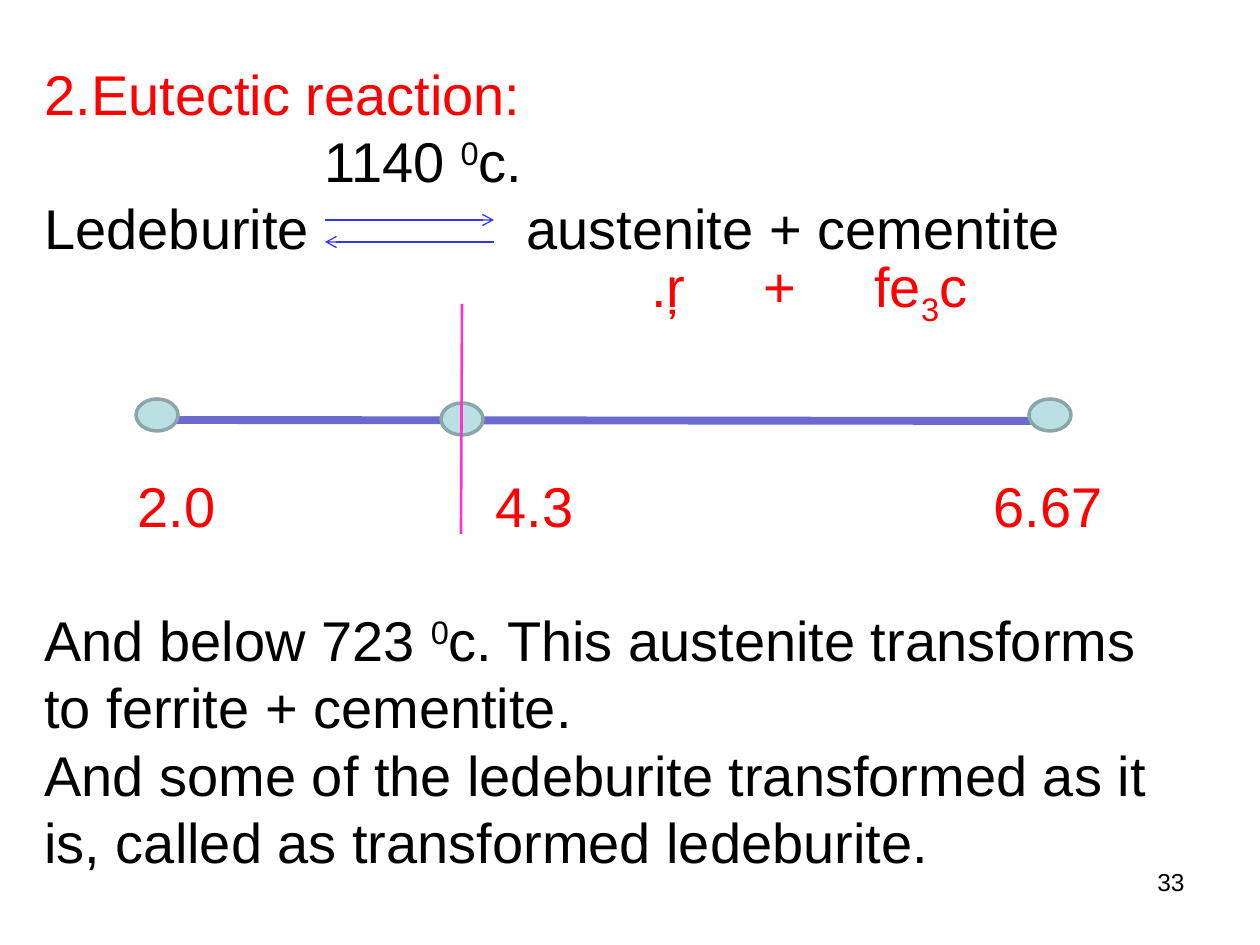
"""Build the eutectic reaction slide with its composition line."""
from typing import NamedTuple

from lxml import etree
from pptx import Presentation
from pptx.dml.color import RGBColor
from pptx.enum.shapes import MSO_CONNECTOR, MSO_SHAPE
from pptx.enum.text import MSO_ANCHOR, PP_ALIGN
from pptx.oxml.ns import qn
from pptx.util import Pt

STRAIGHT = MSO_CONNECTOR.STRAIGHT
NODE = MSO_SHAPE.FLOWCHART_CONNECTOR
TOP = MSO_ANCHOR.TOP
LEFT, RIGHT = PP_ALIGN.LEFT, PP_ALIGN.RIGHT
EMU_PER_PX = 914400 / 126
BLANK_LAYOUT = 6

BLACK = RGBColor(0x00, 0x00, 0x00)
RED = RGBColor(0xFF, 0x00, 0x00)
BLUE = RGBColor(0x33, 0x33, 0xFF)
VIOLET = RGBColor(0x6B, 0x6B, 0xCF)
PINK = RGBColor(0xFF, 0x33, 0xCC)
PALE_TEAL = RGBColor(0xBB, 0xE0, 0xE3)
GREY_TEAL = RGBColor(0x8A, 0xA6, 0xA8)

BODY_SIZE = 32
NUMBER_SIZE = 14
LINE_PITCH = 38.4
NODE_WIDTH, NODE_HEIGHT = 42, 32
SUPERSCRIPT, SUBSCRIPT = 30000, -25000


class Span(NamedTuple):
    text: str
    baseline: int = 0


class Para(NamedTuple):
    spans: list[Span]
    color: RGBColor = BLACK
    tabs: tuple[int, ...] = ()
    space_before: float = 0
    size: int = BODY_SIZE
    align: PP_ALIGN = LEFT


class Line(NamedTuple):
    start: tuple[int, int]
    end: tuple[int, int]
    color: RGBColor
    width: float
    arrow: bool = False


BODY = [
    Para([Span("2.Eutectic reaction:")], RED),
    Para([Span("\t1140 "), Span("0", SUPERSCRIPT), Span("c.")], tabs=(280,)),
    Para([Span("Ledeburite\taustenite + cementite")], tabs=(482,)),
    Para([Span("\t.ŗ\t+\tfe"), Span("3", SUBSCRIPT), Span("c")], RED, (607, 719, 830)),
    Para([Span("\t2.0\t4.3\t6.67")], RED, (93, 451, 949), 2 * LINE_PITCH + 5),
    Para(
        [
            Span("And below 723 "),
            Span("0", SUPERSCRIPT),
            Span("c. This austenite transforms to ferrite + cementite."),
        ],
        space_before=LINE_PITCH,
    ),
    Para([Span("And some of the ledeburite transformed as it is, called as transformed ledeburite.")]),
]
PAGE_NUMBER = [Para([Span("33")], size=NUMBER_SIZE, align=RIGHT)]

REACTION_ARROWS = [
    Line((325, 220), (494, 220), BLUE, 0.75, True),
    Line((494, 242), (325, 242), BLUE, 0.75, True),
]
COMPOSITION_LINE = Line((158, 420), (1050, 421), VIOLET, 4.5)
EUTECTIC_LINE = Line((462, 304), (461, 534), PINK, 1.5)
NODES = [(136, 399), (1029, 399), (441, 403)]


def px(length: int) -> int:
    """Turn pixels into EMU."""
    return round(length * EMU_PER_PX)


def apply(target: object, values: dict) -> None:
    """Set each named attribute on the target."""
    for name, value in values.items():
        setattr(target, name, value)


def add_text(page, left: int, top: int, width: int, height: int, paras: list[Para]) -> None:
    """Add a wrapped text box holding the paragraphs."""
    box = page.shapes.add_textbox(px(left), px(top), px(width), px(height))
    frame = box.text_frame
    apply(frame, {"word_wrap": True, "vertical_anchor": TOP})
    for index, item in enumerate(paras):
        para = frame.add_paragraph() if index else frame.paragraphs[0]
        apply(para, {
            "alignment": item.align,
            "line_spacing": Pt(item.size * LINE_PITCH / BODY_SIZE),
            "space_before": Pt(item.space_before),
        })
        if item.tabs:
            tab_list = etree.SubElement(para._p.get_or_add_pPr(), qn("a:tabLst"))
            for position in item.tabs:
                etree.SubElement(tab_list, qn("a:tab"), pos=str(px(position)), algn="l")
        for span in item.spans:
            run = para.add_run()
            run.text = span.text
            apply(run.font, {"name": "Arial", "size": Pt(item.size)})
            run.font.color.rgb = item.color
            if span.baseline:
                run._r.get_or_add_rPr().set("baseline", str(span.baseline))


def add_line(page, line: Line) -> None:
    """Add a straight line with an optional open arrowhead at its end."""
    connector = page.shapes.add_connector(STRAIGHT, *map(px, line.start + line.end))
    connector.line.color.rgb = line.color
    connector.line.width = Pt(line.width)
    if line.arrow:
        etree.SubElement(connector.line._get_or_add_ln(), qn("a:tailEnd"), type="arrow")
    etree.SubElement(connector._element.spPr, qn("a:effectLst"))


def add_node(page, left: int, top: int) -> None:
    """Add a composition point."""
    node = page.shapes.add_shape(NODE, px(left), px(top), px(NODE_WIDTH), px(NODE_HEIGHT))
    node.shadow.inherit = False
    node.fill.solid()
    node.fill.fore_color.rgb = PALE_TEAL
    node.line.color.rgb = GREY_TEAL
    node.line.width = Pt(2)


def main() -> None:
    """Build and save the deck."""
    deck = Presentation()
    apply(deck, {"slide_width": px(1260), "slide_height": px(945)})
    page = deck.slides.add_slide(deck.slide_layouts[BLANK_LAYOUT])
    add_text(page, 903, 861, 294, 66, PAGE_NUMBER)
    add_text(page, 32, 53, 1166, 895, BODY)
    for line in [*REACTION_ARROWS, COMPOSITION_LINE]:
        add_line(page, line)
    for left, top in NODES:
        add_node(page, left, top)
    add_line(page, EUTECTIC_LINE)
    deck.save("out.pptx")


if __name__ == "__main__":
    main()
